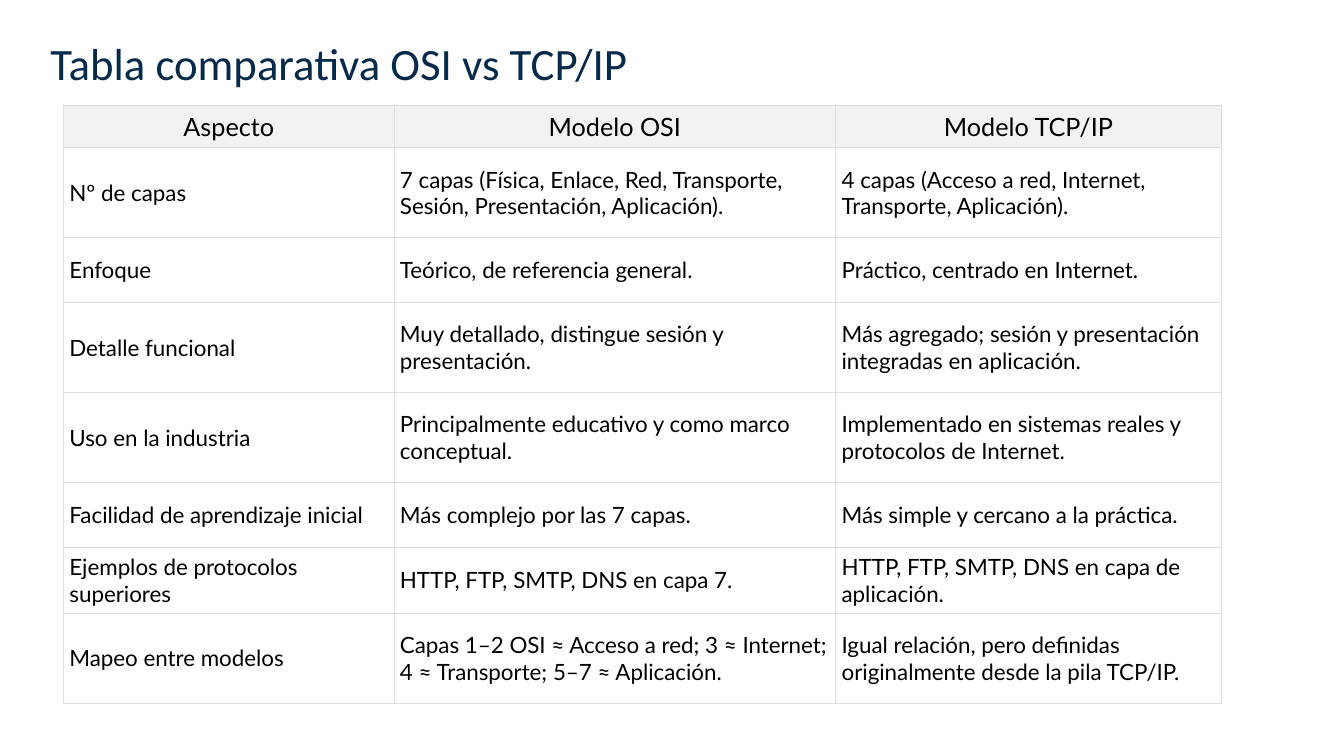
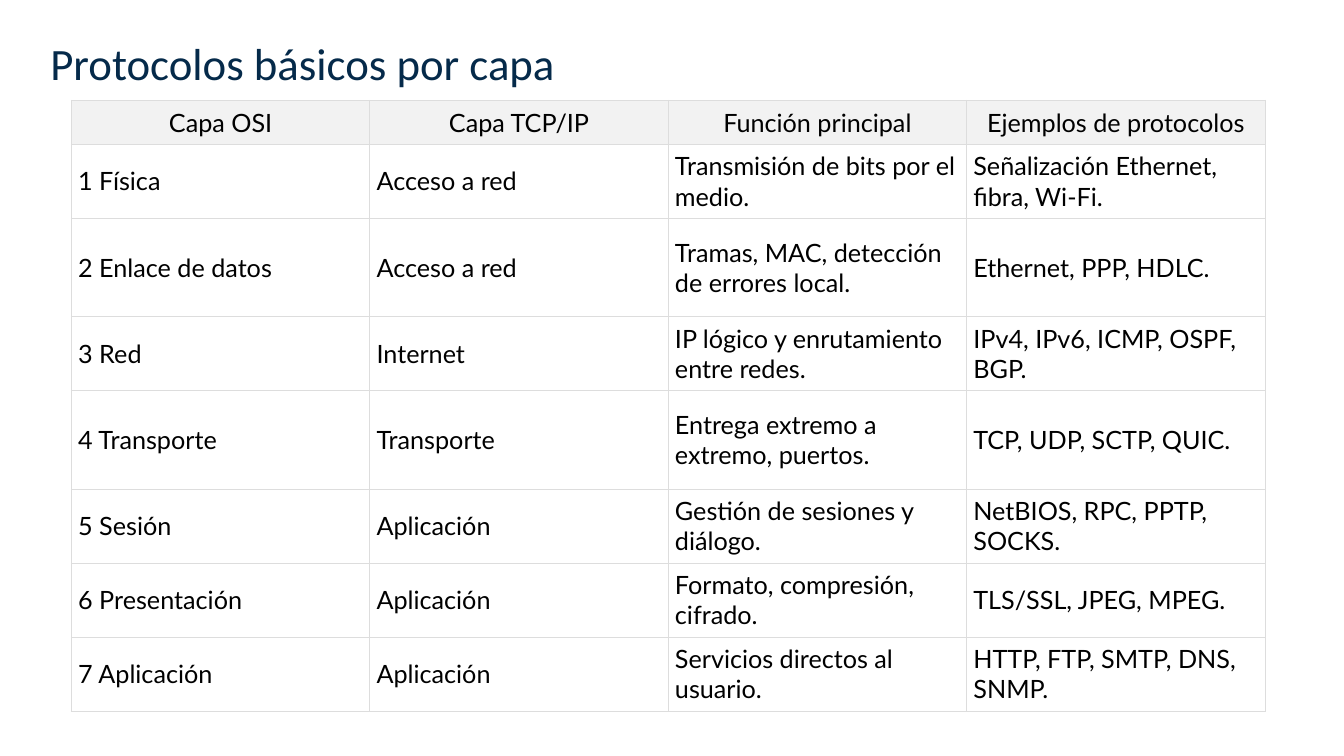
from dataclasses import dataclass

from lxml.etree import SubElement
from pptx import Presentation
from pptx.dml.color import RGBColor
from pptx.enum.text import MSO_ANCHOR, PP_ALIGN
from pptx.oxml.ns import qn
from pptx.slide import Slide
from pptx.table import _Cell
from pptx.text.text import _Paragraph
from pptx.util import Cm, Pt

COLORS = {"title": "052A4A", "text": "000000", "header": "F2F2F2", "border": "DDDDDD"}
TITLE_FONT, TABLE_FONT = "Calibri", "Lato"
TITLE_SIZE, HEADER_SIZE = 32, 18
BORDER_WIDTH = Pt(0.75)


@dataclass
class TableSlide:
    title: str
    left: float
    top: float
    col_widths: list[float]
    row_heights: list[float]
    inset: float
    body_size: int
    rows: list[tuple[str, ...]]


TALL, SHORT = 2.27, 1.63
WIDE, NORMAL = 2.48, 1.85

TABLE_SLIDES = [
    TableSlide(
        title="Tabla comparativa OSI vs TCP/IP",
        left=1.6, top=2.66,
        col_widths=[8.33, 11.13, 9.72],
        row_heights=[1.06, TALL, SHORT, TALL, TALL, SHORT, SHORT, TALL],
        inset=0.15, body_size=16,
        rows=[
            ("Aspecto", "Modelo OSI", "Modelo TCP/IP"),
            ("Nº de capas",
             "7 capas (Física, Enlace, Red, Transporte, Sesión, Presentación, Aplicación).",
             "4 capas (Acceso a red, Internet, Transporte, Aplicación)."),
            ("Enfoque", "Teórico, de referencia general.", "Práctico, centrado en Internet."),
            ("Detalle funcional",
             "Muy detallado, distingue sesión y presentación.",
             "Más agregado; sesión y presentación integradas en aplicación."),
            ("Uso en la industria",
             "Principalmente educativo y como marco conceptual.",
             "Implementado en sistemas reales y protocolos de Internet."),
            ("Facilidad de aprendizaje inicial",
             "Más complejo por las 7 capas.",
             "Más simple y cercano a la práctica."),
            ("Ejemplos de protocolos superiores",
             "HTTP, FTP, SMTP, DNS en capa 7.",
             "HTTP, FTP, SMTP, DNS en capa de aplicación."),
            ("Mapeo entre modelos",
             "Capas 1–2 OSI ≈ Acceso a red; 3 ≈ Internet; 4 ≈ Transporte; 5–7 ≈ Aplicación.",
             "Igual relación, pero definidas originalmente desde la pila TCP/IP."),
        ],
    ),
    TableSlide(
        title="Protocolos básicos por capa",
        left=1.8, top=2.53,
        col_widths=[7.52] * 4,
        row_heights=[1.1, NORMAL, WIDE, NORMAL, WIDE, NORMAL, NORMAL, NORMAL],
        inset=0.17, body_size=18,
        rows=[
            ("Capa OSI", "Capa TCP/IP", "Función principal", "Ejemplos de protocolos"),
            ("1 Física", "Acceso a red", "Transmisión de bits por el medio.",
             "Señalización Ethernet, fibra, Wi‑Fi."),
            ("2 Enlace de datos", "Acceso a red", "Tramas, MAC, detección de errores local.",
             "Ethernet, PPP, HDLC."),
            ("3 Red", "Internet", "IP lógico y enrutamiento entre redes.",
             "IPv4, IPv6, ICMP, OSPF, BGP."),
            ("4 Transporte", "Transporte", "Entrega extremo a extremo, puertos.",
             "TCP, UDP, SCTP, QUIC."),
            ("5 Sesión", "Aplicación", "Gestión de sesiones y diálogo.",
             "NetBIOS, RPC, PPTP, SOCKS."),
            ("6 Presentación", "Aplicación", "Formato, compresión, cifrado.",
             "TLS/SSL, JPEG, MPEG."),
            ("7 Aplicación", "Aplicación", "Servicios directos al usuario.",
             "HTTP, FTP, SMTP, DNS, SNMP."),
        ],
    ),
]


def add_run(p: _Paragraph, text: str, font: str, size: int, color: str) -> None:
    r = p.add_run()
    r.text = text
    r.font.name = font
    r.font.size = Pt(size)
    r.font.color.rgb = RGBColor.from_string(COLORS[color])


def add_title(s: Slide, text: str) -> None:
    tf = s.shapes.add_textbox(Cm(1.02), Cm(0.38), Cm(31.93), Cm(2.59)).text_frame
    tf.word_wrap = True
    tf.vertical_anchor = MSO_ANCHOR.MIDDLE
    p = tf.paragraphs[0]
    p.line_spacing = 0.9
    add_run(p, text, TITLE_FONT, TITLE_SIZE, "title")


def add_borders(cell: _Cell) -> None:
    tc_pr = cell._tc.get_or_add_tcPr()
    for side in ("lnL", "lnR", "lnT", "lnB"):
        ln = SubElement(tc_pr, qn(f"a:{side}"), w=str(BORDER_WIDTH))
        fill = SubElement(ln, qn("a:solidFill"))
        SubElement(fill, qn("a:srgbClr"), val=COLORS["border"])


def fill_cell(cell: _Cell, text: str, is_header: bool, spec_slide: TableSlide) -> None:
    add_borders(cell)
    cell.vertical_anchor = MSO_ANCHOR.MIDDLE
    cell.margin_left = cell.margin_right = Cm(spec_slide.inset)
    cell.margin_top = cell.margin_bottom = Cm(spec_slide.inset)
    p = cell.text_frame.paragraphs[0]
    if is_header:
        cell.fill.solid()
        cell.fill.fore_color.rgb = RGBColor.from_string(COLORS["header"])
        p.alignment = PP_ALIGN.CENTER
    else:
        cell.fill.background()
    size = HEADER_SIZE if is_header else spec_slide.body_size
    add_run(p, text, TABLE_FONT, size, "text")


def add_comparison(s: Slide, data: TableSlide) -> None:
    table = s.shapes.add_table(
        len(data.rows), len(data.col_widths), Cm(data.left), Cm(data.top),
        Cm(sum(data.col_widths)), Cm(sum(data.row_heights)),
    ).table
    table.first_row = table.horz_banding = False
    for column, width in zip(table.columns, data.col_widths):
        column.width = Cm(width)
    for row, height in zip(table.rows, data.row_heights):
        row.height = Cm(height)
    for i, texts in enumerate(data.rows):
        for j, text in enumerate(texts):
            fill_cell(table.cell(i, j), text, i == 0, data)


def main() -> None:
    prs = Presentation()
    prs.slide_width, prs.slide_height = Cm(33.87), Cm(19.05)
    for data in TABLE_SLIDES:
        s = prs.slides.add_slide(prs.slide_layouts[6])
        add_title(s, data.title)
        add_comparison(s, data)
    prs.save("out.pptx")


if __name__ == "__main__":
    main()
